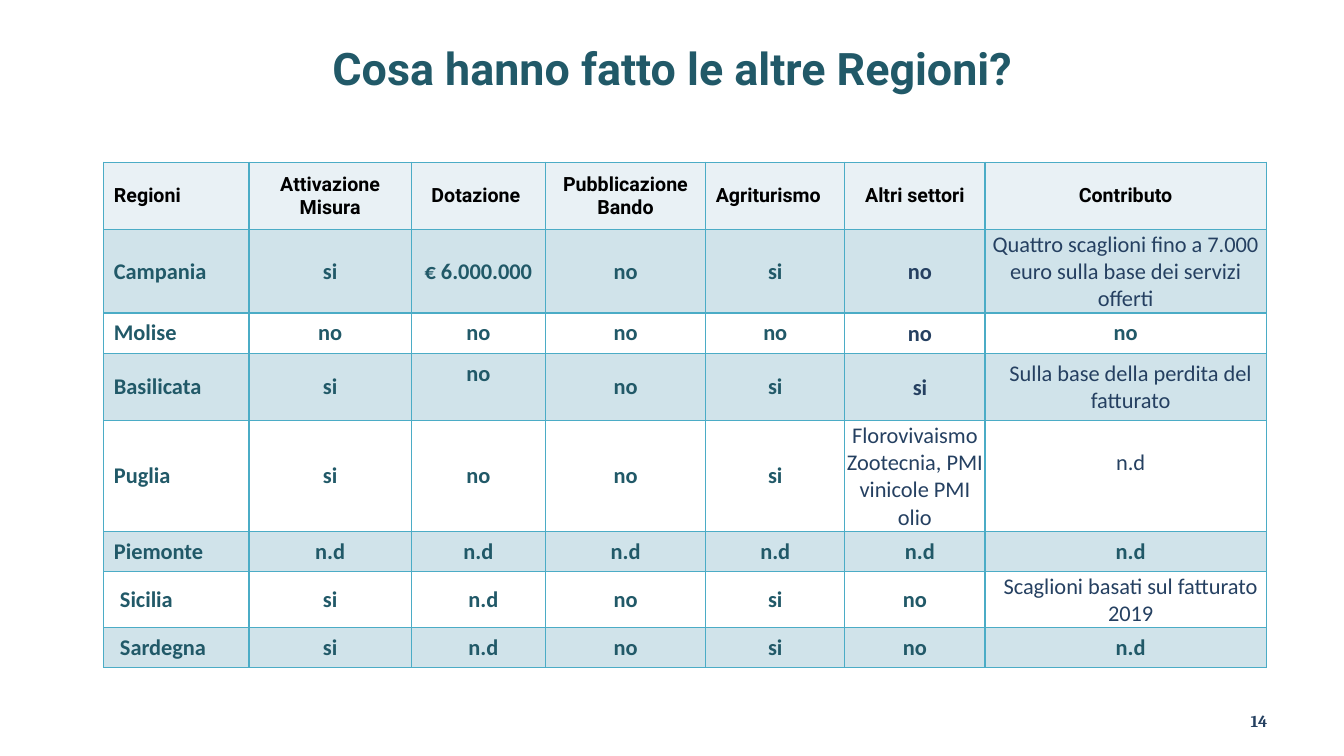
import pptx
import pptx.dml.color
import pptx.enum.text
import pptx.oxml
import pptx.oxml.ns
import pptx.util

Inches = pptx.util.Inches
Align = pptx.enum.text.PP_ALIGN
Anchor = pptx.enum.text.MSO_ANCHOR

COLORS = {"teal": "215968", "navy": "254061", "black": "000000",
          "header": "E9F1F5", "band": "D0E3EA", "border": "4BACC6"}

COLUMN_WIDTHS = [1.44, 1.61, 1.33, 1.59, 1.38, 1.39, 2.79]
ROW_HEIGHTS = [0.67, 0.69, 0.4, 0.67, 0.76, 0.4, 0.4, 0.4]
REGIONS = [
    ["Regioni", "Attivazione Misura", "Dotazione ", "Pubblicazione Bando",
     "Agriturismo", "Altri settori", "Contributo"],
    ["Campania", "si", "€ 6.000.000", "no", "si", "no",
     "Quattro scaglioni fino a 7.000 euro sulla base dei servizi offerti"],
    ["Molise", "no", "no", "no", "no", "no", "no"],
    ["Basilicata", "si", "no", "no", "si", "si",
     "Sulla base della perdita del fatturato"],
    ["Puglia", "si", "no", "no", "si",
     "Florovivaismo\nZootecnia, PMI vinicole PMI olio", "n.d"],
    ["Piemonte", "n.d", "n.d", "n.d", "n.d", "n.d", "n.d"],
    ["Sicilia", "si", "n.d", "no", "si", "no",
     "Scaglioni basati sul fatturato 2019"],
    ["Sardegna", "si", "n.d", "no", "si", "no", "n.d"],
]
PLAIN = {(1, 6), (3, 6), (4, 5), (4, 6), (6, 6)}
NAVY = PLAIN | {(1, 5), (2, 5), (3, 5)}
TIGHT = ({(row, 5) for row in range(1, 6)}
         | {(row, 6) for row in (1, 3, 4, 5, 6, 7)}
         | {(row, column) for row in (6, 7) for column in range(3)})
FLUSH = {(1, 6), (4, 5), (6, 1), (7, 1)}
LEFT_ALIGNED = {(row, 0) for row in range(8)} | {(0, 4)}
RAISED = {(3, 2), (4, 6)}


class SlideBuilder:
    """Holds the text style and the current page."""

    def __init__(self, deck):
        self.page = deck.slides.add_slide(deck.slide_layouts[5])

    def color(self, name):
        return pptx.dml.color.RGBColor.from_string(COLORS[name])

    def set_text(self, frame, text, font, size, color, align=Align.CENTER, bold=True):
        frame.text = text
        frame.word_wrap = True
        for para in frame.paragraphs:
            para.alignment = align
            for span in para.runs:
                span.font.name = font
                span.font.size = pptx.util.Pt(size)
                span.font.bold = bold
                span.font.color.rgb = self.color(color)

    def place(self, box, left, top, width, height):
        box.left, box.top = Inches(left), Inches(top)
        box.width, box.height = Inches(width), Inches(height)
        box.text_frame.vertical_anchor = Anchor.MIDDLE

    def title(self, text):
        box = self.page.shapes.title
        self.place(box, 0.67, 0.3, 12, 0.75)
        self.set_text(box.text_frame, text, "Roboto", 32, "teal")

    def page_number(self, text):
        box = self.page.shapes.add_textbox(0, 0, 0, 0)
        self.place(box, 9.56, 6.95, 3.11, 0.4)
        self.set_text(box.text_frame, text, "Cambria", 12, "navy", Align.RIGHT)

    def border(self, cell):
        properties = cell._tc.get_or_add_tcPr()
        for side in "LRTB":
            properties.append(pptx.oxml.parse_xml(
                f'<a:ln{side} {pptx.oxml.ns.nsdecls("a")} w="12700"><a:solidFill>'
                f'<a:srgbClr val="{COLORS["border"]}"/></a:solidFill></a:ln{side}>'))

    def fill(self, cell, row):
        if row > 0 and row % 2 == 0:
            cell.fill.background()
        else:
            cell.fill.solid()
            cell.fill.fore_color.rgb = self.color("band" if row else "header")

    def inset(self, cell, spot):
        left, side, top, bottom = 0.1, 0.1, 0.05, 0.05
        if spot in TIGHT:
            left, side, top, bottom = 0.11, 0.01, 0.01, 0
            if spot[1] == 0:
                left = 0.16
            elif spot in FLUSH:
                left = 0.01
        if spot in RAISED:
            bottom += 0.27
        cell.margin_left, cell.margin_right = Inches(left), Inches(side)
        cell.margin_top, cell.margin_bottom = Inches(top), Inches(bottom)
        cell.vertical_anchor = Anchor.MIDDLE

    def table(self, rows):
        frame = self.page.shapes.add_table(
            len(rows), len(rows[0]), Inches(1.03), Inches(1.61),
            Inches(sum(COLUMN_WIDTHS)), Inches(sum(ROW_HEIGHTS)))
        table = frame.table
        table.first_row = table.horz_banding = False
        for column, width in zip(table.columns, COLUMN_WIDTHS):
            column.width = Inches(width)
        for line, height in zip(table.rows, ROW_HEIGHTS):
            line.height = Inches(height)
        for row, texts in enumerate(rows):
            for column, text in enumerate(texts):
                spot = (row, column)
                cell = table.cell(row, column)
                self.inset(cell, spot)
                self.border(cell)
                self.fill(cell, row)
                align = Align.LEFT if spot in LEFT_ALIGNED else Align.CENTER
                if row == 0:
                    self.set_text(cell.text_frame, text, "Roboto", 14, "black", align)
                else:
                    self.set_text(cell.text_frame, text, "Calibri", 16,
                                  "navy" if spot in NAVY else "teal",
                                  align, spot not in PLAIN)


def main():
    deck = pptx.Presentation()
    deck.slide_width, deck.slide_height = Inches(13.33), Inches(7.5)
    builder = SlideBuilder(deck)
    builder.title("Cosa hanno fatto le altre Regioni?")
    builder.table(REGIONS)
    builder.page_number("14")
    deck.save("out.pptx")


if __name__ == "__main__":
    main()
